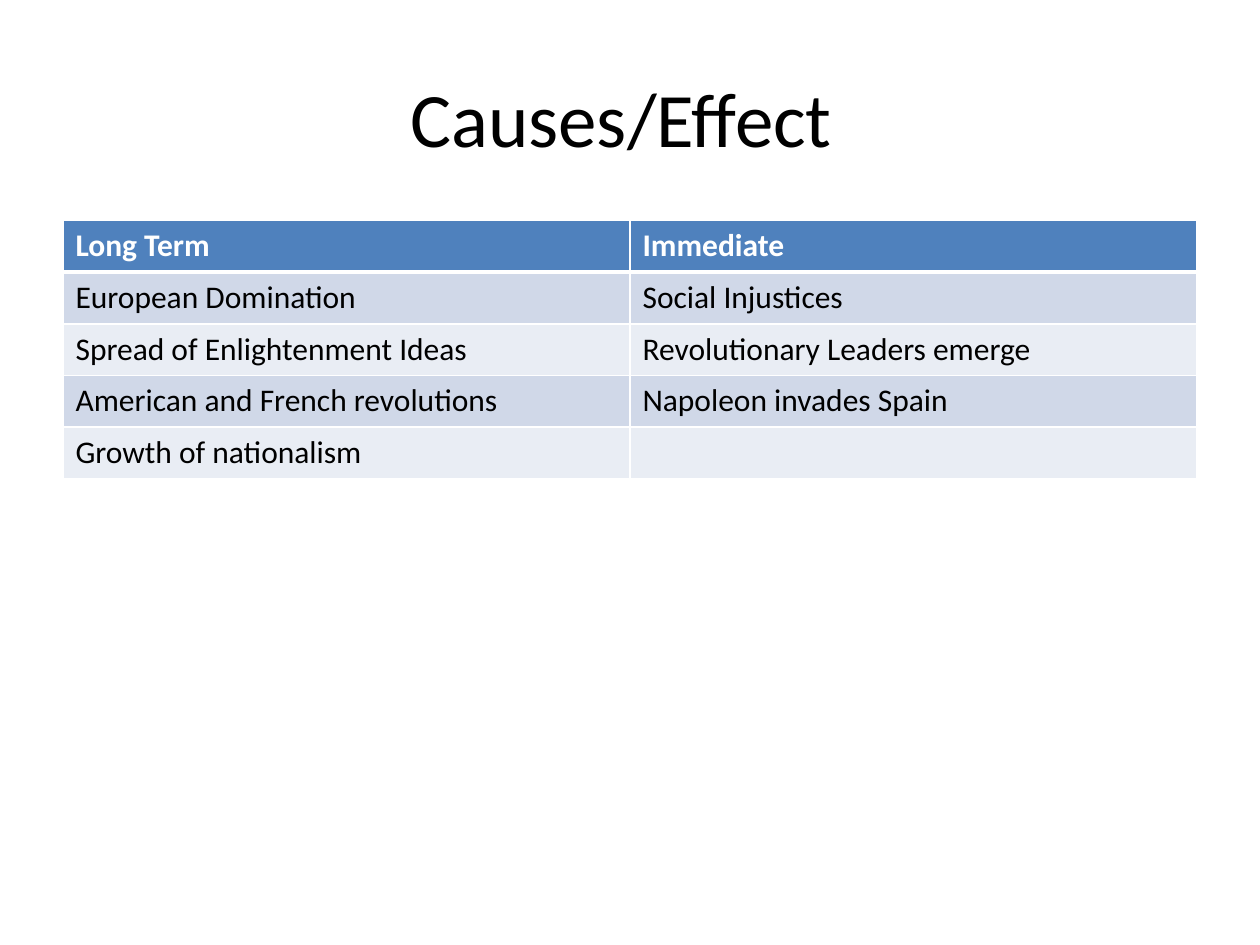
import dataclasses

import lxml.etree
import pptx
import pptx.dml.color
import pptx.enum.text
import pptx.oxml.ns
import pptx.util

FONT = "Calibri"
WIDE, HIGH = pptx.util.Inches(10), pptx.util.Inches(7.5)
ROWS = [
    ("Long Term", "Immediate"),
    ("European Domination", "Social Injustices"),
    ("Spread of Enlightenment Ideas", "Revolutionary Leaders emerge"),
    ("American and French revolutions", "Napoleon invades Spain"),
    ("Growth of nationalism", ""),
]


@dataclasses.dataclass(frozen=True)
class Look:
    fill: str
    ink: str = "000000"
    bold: bool = False
    top: float = 1
    base: float = 1


HEAD = Look("4F81BD", "FFFFFF", True, base=3)
FIRST = Look("D0D8E8", top=3)
BANDS = (Look("E9EDF4"), Look("D0D8E8"))


def color(code: str) -> pptx.dml.color.RGBColor:
    return pptx.dml.color.RGBColor.from_string(code)


def style(para, size: float, ink: str, bold: bool = False) -> None:
    # Empty cells keep their size through the paragraph font
    for font in [para.font] + [run.font for run in para.runs]:
        font.name, font.size, font.bold = FONT, pptx.util.Pt(size), bold
        font.color.rgb = color(ink)


def edge(cell, look: Look) -> None:
    """Draw white cell borders; they must come before the fill."""
    qn = pptx.oxml.ns.qn
    props = cell._tc.get_or_add_tcPr()
    sides = {"lnL": 1, "lnR": 1, "lnT": look.top, "lnB": look.base}
    for spot, (side, width) in enumerate(sides.items()):
        line = lxml.etree.Element(qn(f"a:{side}"), w=str(pptx.util.Pt(width)))
        fill = lxml.etree.SubElement(line, qn("a:solidFill"))
        lxml.etree.SubElement(fill, qn("a:srgbClr"), val="FFFFFF")
        props.insert(spot, line)


def paint(cell, text: str, look: Look) -> None:
    cell.text_frame.text = text
    style(cell.text_frame.paragraphs[0], 18, look.ink, look.bold)
    cell.fill.solid()
    cell.fill.fore_color.rgb = color(look.fill)
    edge(cell, look)


def add_title(slide, text: str) -> None:
    title = slide.shapes.title
    title.left, title.top = int(WIDE * 0.05), int(HIGH * 0.04)
    title.width, title.height = int(WIDE * 0.9), pptx.util.Inches(1.25)
    frame = title.text_frame
    frame.text = text
    frame.vertical_anchor = pptx.enum.text.MSO_ANCHOR.MIDDLE
    para = frame.paragraphs[0]
    para.alignment = pptx.enum.text.PP_ALIGN.CENTER
    style(para, 44, "000000")


def add_grid(slide, rows: list[tuple[str, str]]) -> None:
    tall = pptx.util.Inches(0.41)
    table = slide.shapes.add_table(
        len(rows), len(rows[0]), int(WIDE * 0.05), pptx.util.Inches(1.75),
        int(WIDE * 0.9), tall * len(rows)).table
    for r, texts in enumerate(rows):
        table.rows[r].height = tall
        look = (HEAD, FIRST)[r] if r < 2 else BANDS[r % 2]
        for c, text in enumerate(texts):
            paint(table.cell(r, c), text, look)


def main() -> None:
    deck = pptx.Presentation()
    deck.slide_width, deck.slide_height = WIDE, HIGH
    slide = deck.slides.add_slide(deck.slide_layouts[5])
    # Heading, then the table of causes
    add_title(slide, "Causes/Effect ")
    add_grid(slide, ROWS)
    deck.save("out.pptx")


if __name__ == "__main__":
    main()
